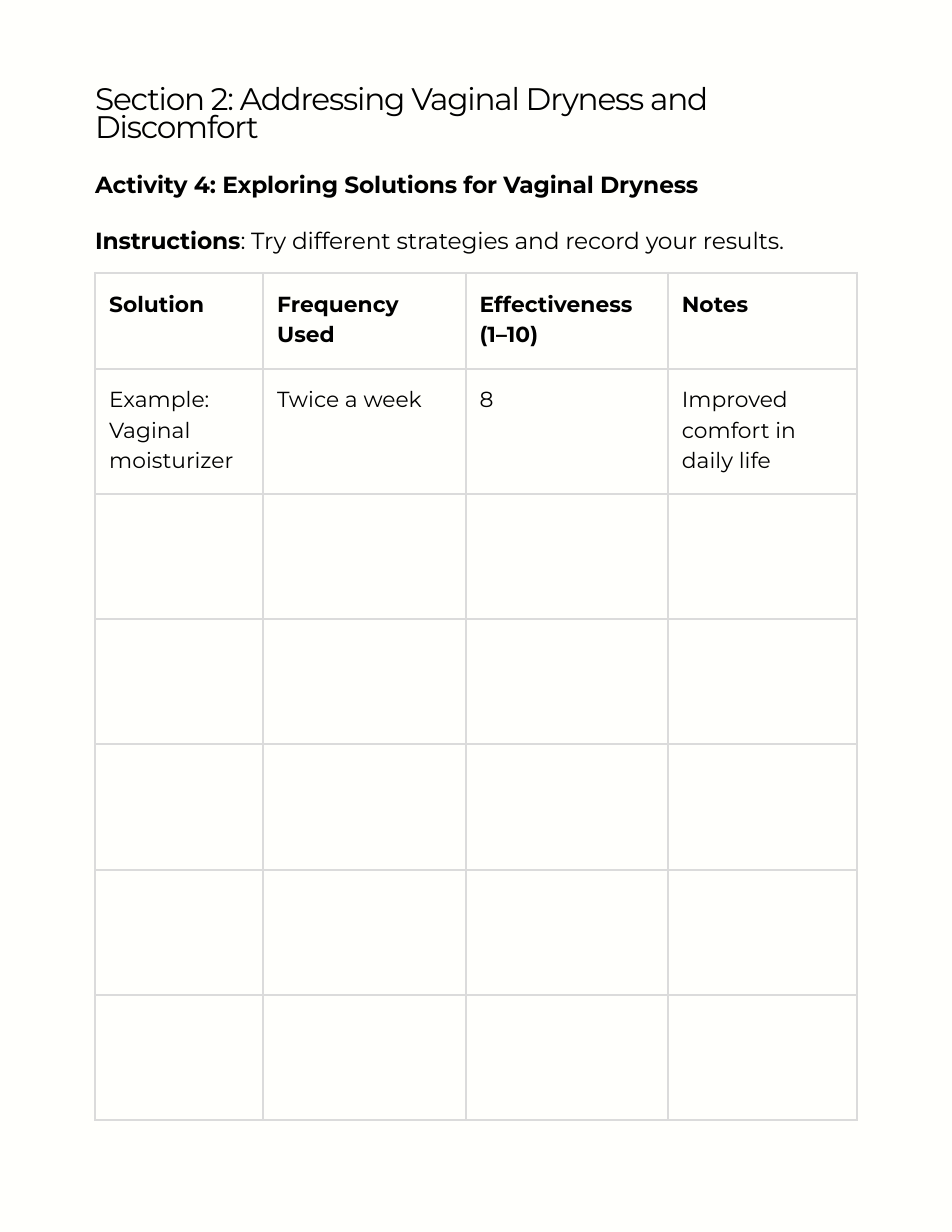
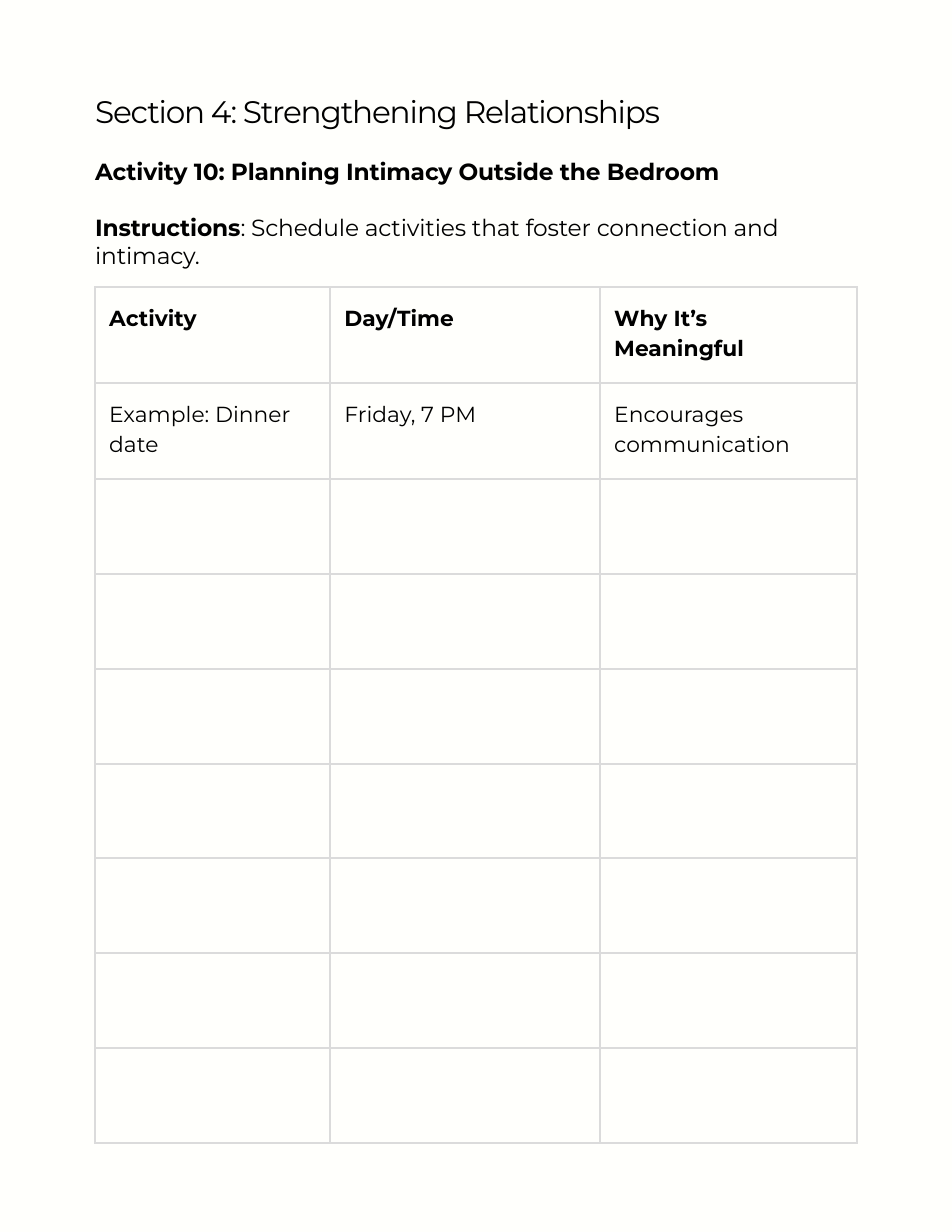
from pptx import Presentation
from pptx.dml.color import RGBColor as Color
from pptx.enum.text import MSO_AUTO_SIZE as AutoSize, MSO_ANCHOR as Anchor, PP_ALIGN as Align
from pptx.oxml import parse_xml
from pptx.oxml.ns import nsdecls
from pptx.util import Pt

COLORS = {"paper": "FFFFFC", "ink": "000000", "grid": "DBDBDB"}
LEFT, WIDTH = 61.2, 489.6
LINE = Pt(18)
TITLE_FONT = {"name": "Montserrat", "size": Pt(20), "bold": False}
BODY_FONT = {"name": "Montserrat", "size": Pt(15)}
CELL_FONT = {"name": "Montserrat", "size": Pt(14)}
FRAME_FORMAT = {"margin_left": 0, "margin_right": 0, "margin_top": 0, "margin_bottom": 0,
                "word_wrap": True, "auto_size": AutoSize.NONE, "vertical_anchor": Anchor.TOP}
CELL_FORMAT = {"margin_left": Pt(9), "margin_right": Pt(9), "margin_top": Pt(9),
               "margin_bottom": Pt(9), "vertical_anchor": Anchor.TOP}
TABLE_FORMAT = {"first_row": False, "horz_banding": False}

WORKSHEETS = [
    {
        "title": "Section 2: Addressing Vaginal Dryness and Discomfort",
        "title_box": (56.9, 36.7),
        "activity": "Activity 4: Exploring Solutions for Vaginal Dryness",
        "instructions": ": Try different strategies and record your results.",
        "body_box": (109.4, 50.4),
        "table_top": 175.5,
        "columns": [108, 130.1, 130.1, 121.6],
        "rows": [61.6] + [80.5] * 6,
        "cells": [
            ["Solution", "Frequency Used", "Effectiveness (1–10)", "Notes"],
            ["Example: Vaginal moisturizer", "Twice a week", "8", "Improved comfort in daily life"],
        ],
    },
    {
        "title": "Section 4: Strengthening Relationships",
        "title_box": (65.5, 19.4),
        "activity": "Activity 10: Planning Intimacy Outside the Bedroom",
        "instructions": ": Schedule activities that foster connection and intimacy.",
        "body_box": (101.2, 67),
        "table_top": 184.8,
        "columns": [151.2, 173.5, 164.9],
        "rows": [61.6] * 2 + [61] * 7,
        "cells": [
            ["Activity", "Day/Time", "Why It’s Meaningful"],
            ["Example: Dinner date", "Friday, 7 PM", "Encourages communication"],
        ],
    },
]


def apply_format(target, values):
    for name, value in values.items():
        setattr(target, name, value)


def add_run(paragraph, text, font_format, bold=False, tracking=0):
    run = paragraph.add_run()
    run.text = text
    apply_format(run.font, {**font_format, "bold": bold})
    run.font.color.rgb = Color.from_string(COLORS["ink"])
    if tracking:
        run.font._element.set("spc", str(tracking))


presentation = Presentation()
apply_format(presentation, {"slide_width": Pt(612), "slide_height": Pt(792)})
background = presentation.slide_master.background.fill
background.solid()
background.fore_color.rgb = Color.from_string(COLORS["paper"])

for worksheet in WORKSHEETS:
    slide = presentation.slides.add_slide(presentation.slide_layouts[5])

    title = slide.shapes.title
    top, height = worksheet["title_box"]
    apply_format(title, {"left": Pt(LEFT), "top": Pt(top), "width": Pt(WIDTH), "height": Pt(height)})
    apply_format(title.text_frame, FRAME_FORMAT)
    paragraph = title.text_frame.paragraphs[0]
    apply_format(paragraph, {"alignment": Align.LEFT, "line_spacing": LINE, "space_before": 0})
    add_run(paragraph, worksheet["title"], TITLE_FONT, tracking=-80)

    top, height = worksheet["body_box"]
    body = slide.shapes.add_textbox(Pt(LEFT), Pt(top), Pt(WIDTH), Pt(height)).text_frame
    apply_format(body, FRAME_FORMAT)
    activity = body.paragraphs[0]
    activity.line_spacing = LINE
    add_run(activity, worksheet["activity"], BODY_FONT, bold=True, tracking=-10)
    instructions = body.add_paragraph()
    apply_format(instructions, {"line_spacing": LINE, "space_before": LINE})
    add_run(instructions, "Instructions", BODY_FONT, bold=True, tracking=-10)
    add_run(instructions, worksheet["instructions"], BODY_FONT, tracking=-10)

    columns, rows = worksheet["columns"], worksheet["rows"]
    table = slide.shapes.add_table(len(rows), len(columns), Pt(LEFT), Pt(worksheet["table_top"]),
                                   Pt(WIDTH), Pt(sum(rows))).table
    apply_format(table, TABLE_FORMAT)
    for column, width in zip(table.columns, columns):
        column.width = Pt(width)
    for row, height in zip(table.rows, rows):
        row.height = Pt(height)

    for cell in table.iter_cells():
        apply_format(cell, CELL_FORMAT)
        properties = cell._tc.get_or_add_tcPr()
        for side in ("lnL", "lnR", "lnT", "lnB"):
            properties.append(parse_xml(
                f'<a:{side} {nsdecls("a")} w="{Pt(1.5)}"><a:solidFill>'
                f'<a:srgbClr val="{COLORS["grid"]}"/></a:solidFill></a:{side}>'))
        cell.fill.background()

    for row_index, texts in enumerate(worksheet["cells"]):
        for column_index, text in enumerate(texts):
            paragraph = table.cell(row_index, column_index).text_frame.paragraphs[0]
            paragraph.line_spacing = Pt(19.6)
            add_run(paragraph, text, CELL_FONT, bold=row_index == 0)

presentation.save("out.pptx")
